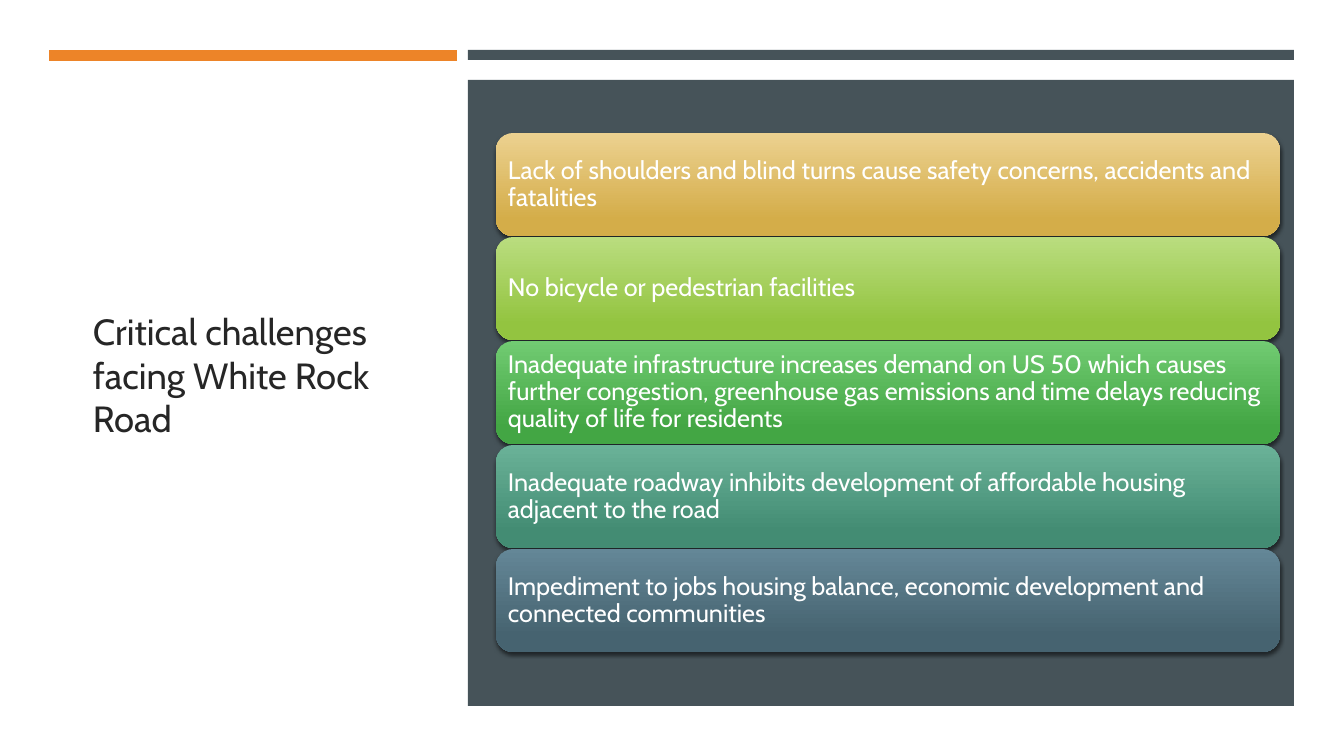
from pptx import Presentation
from pptx.dml.color import RGBColor
from pptx.enum.shapes import MSO_SHAPE
from pptx.enum.text import MSO_ANCHOR, PP_ALIGN
from pptx.oxml import parse_xml
from pptx.oxml.ns import nsdecls, qn
from pptx.util import Inches, Pt

WIDTH, HEIGHT = 1344, 756
SCALE = Inches(7.5) / HEIGHT

ORANGE, SLATE, WHITE, INK = "ED8428", "465359", "FFFFFF", "262626"

CHALLENGES = [
    ("Lack of shoulders and blind turns cause safety concerns, accidents and fatalities",
     "ECD190", "D4AD49"),
    ("No bicycle or pedestrian facilities", "BADD7F", "93C440"),
    ("Inadequate infrastructure increases demand on US 50 which causes further congestion, "
     "greenhouse gas emissions and time delays reducing quality of life for residents",
     "71CB72", "43A644"),
    ("Inadequate roadway inhibits development of affordable housing adjacent to the road",
     "6AB298", "438C73"),
    ("Impediment to jobs housing balance, economic development and connected communities",
     "648797", "466370"),
]
CARD_TOP, CARD_PITCH = 133, 104


def px(length):
    return round(length * SCALE)


def color(value):
    return RGBColor.from_string(value)


class SlideBuilder:
    font = "Cabin"

    def __init__(self, deck):
        self.page = deck.slides.add_slide(deck.slide_layouts[6])
        background = self.page.background.fill
        background.solid()
        background.fore_color.rgb = color(WHITE)

    def shape(self, kind, left, top, width, height):
        shape = self.page.shapes.add_shape(kind, px(left), px(top), px(width), px(height))
        shape.shadow.inherit = False
        shape.line.fill.background()
        return shape

    def block(self, left, top, width, height, fill):
        block = self.shape(MSO_SHAPE.RECTANGLE, left, top, width, height)
        block.fill.solid()
        block.fill.fore_color.rgb = color(fill)

    def set_text(self, box, text, size, ink, inset, spacing=1.0):
        frame = box.text_frame
        frame.word_wrap = True
        frame.vertical_anchor = MSO_ANCHOR.MIDDLE
        frame.margin_left = frame.margin_right = px(inset)
        frame.margin_top = frame.margin_bottom = px(inset)
        para = frame.paragraphs[0]
        para.text = text
        para.alignment = PP_ALIGN.LEFT
        para.line_spacing = spacing
        para.font.name = self.font
        para.font.size = Pt(size)
        para.font.color.rgb = color(ink)

    def title(self, left, top, width, height, text):
        box = self.page.shapes.add_textbox(px(left), px(top), px(width), px(height))
        self.set_text(box, text, 26, INK, inset=10)

    def card(self, left, top, width, height, text, light, dark):
        card = self.shape(MSO_SHAPE.ROUNDED_RECTANGLE, left, top, width, height)
        card.fill.gradient()
        card.fill.gradient_angle = 270
        for stop, position, shade in zip(card.fill.gradient_stops, (0, 0.84), (light, dark)):
            stop.position = position
            stop.color.rgb = color(shade)
        self.drop_shadow(card)
        self.set_text(card, text, 18, WHITE, inset=7, spacing=0.9)

    def drop_shadow(self, shape):
        effects = shape.element.spPr.find(qn("a:effectLst"))
        effects.append(parse_xml(
            f'<a:outerShdw {nsdecls("a")} blurRad="{Pt(3)}" dist="{Pt(2)}" dir="5400000" '
            'algn="ctr" rotWithShape="0"><a:srgbClr val="000000">'
            '<a:alpha val="55000"/></a:srgbClr></a:outerShdw>'))


def main():
    deck = Presentation()
    deck.slide_width, deck.slide_height = px(WIDTH), px(HEIGHT)
    slide = SlideBuilder(deck)
    slide.title(83, 115, 311, 519, "Critical challenges facing White Rock Road")
    slide.block(49, 50, 408, 11, ORANGE)
    slide.block(468, 50, 826, 10, SLATE)
    slide.block(468, 80, 826, 626, SLATE)
    for row, (text, light, dark) in enumerate(CHALLENGES):
        slide.card(496, CARD_TOP + row * CARD_PITCH, 784, 103, text, light, dark)
    deck.save("out.pptx")


if __name__ == "__main__":
    main()
